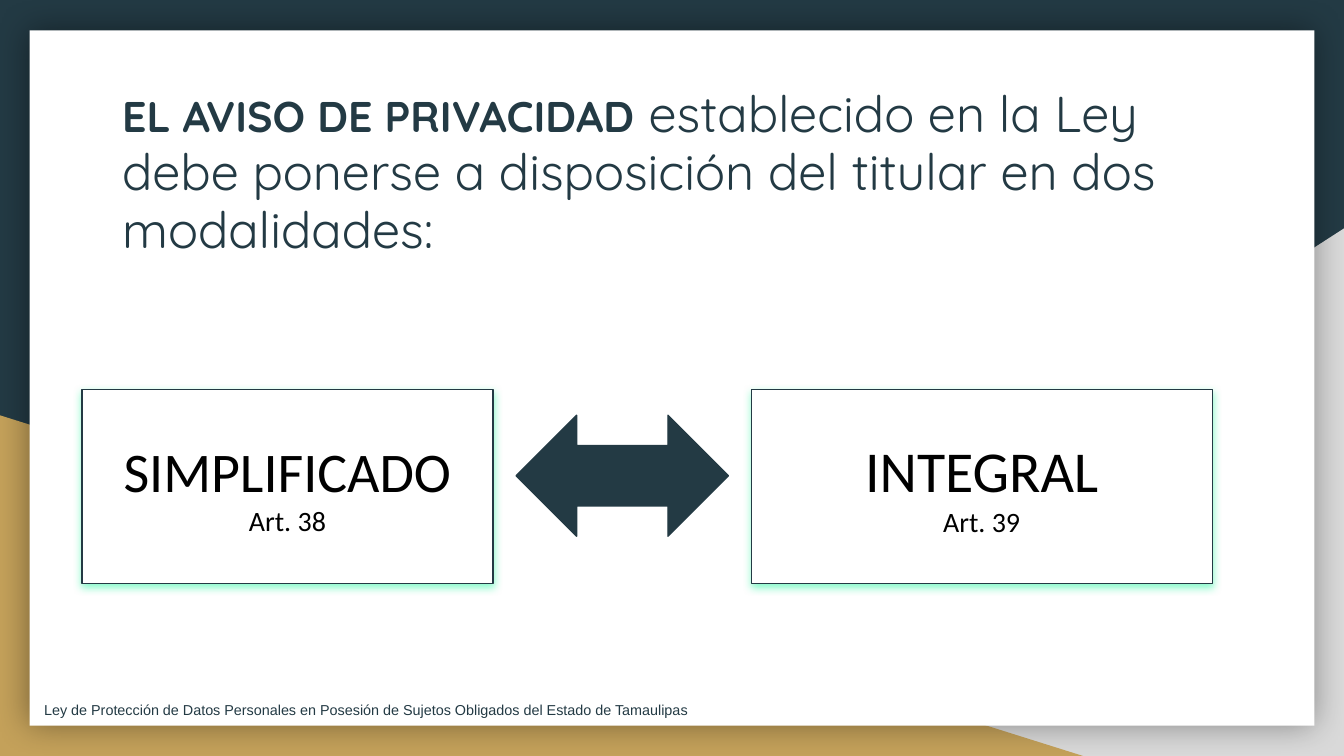
from lxml import etree
from pptx import Presentation
from pptx import util as u
from pptx.dml.color import RGBColor
from pptx.enum import shapes, text
from pptx.oxml.ns import qn

NAVY = RGBColor(0x23, 0x3A, 0x44)
GOLD = RGBColor(0xC4, 0xA1, 0x5A)
GREY = RGBColor(0xD9, 0xD9, 0xD9)
MINT = RGBColor(0x14, 0xF5, 0x97)
WHITE = RGBColor(0xFF, 0xFF, 0xFF)
BLACK = RGBColor(0, 0, 0)
CELL = u.Inches(0.1)
COLS, ROWS = 100, 56.25
KIND = shapes.MSO_SHAPE


class Deck:
    heading, label, small = "Quicksand", "Calibri", "Arial"

    def __init__(self):
        self.prs = Presentation()
        self.prs.slide_width = int(COLS * CELL)
        self.prs.slide_height = int(ROWS * CELL)
        self.s = self.prs.slides.add_slide(self.prs.slide_layouts[6])
        fill = self.s.background.fill
        fill.solid()
        fill.fore_color.rgb = NAVY

    def grid(self, box):
        return [int(n * CELL) for n in box]

    def shape(self, kind, box, color, line=None, flip=False):
        sp = self.s.shapes.add_shape(kind, *self.grid(box))
        sp.shadow.inherit = False
        sp.fill.solid()
        sp.fill.fore_color.rgb = color
        if line is None:
            sp.line.fill.background()
        else:
            sp.line.color.rgb = line
            sp.line.width = u.Pt(0.75)
        if flip:
            sp._element.spPr.find(qn("a:xfrm")).set("flipH", "1")
        return sp

    def shadow(self, sp, color, alpha, blur, dist=0, angle=0):
        effects = sp._element.spPr.find(qn("a:effectLst"))
        outer = etree.SubElement(
            effects, qn("a:outerShdw"), blurRad=str(u.Pt(blur)), dist=str(u.Pt(dist)),
            dir=str(angle * 60000), algn="bl", rotWithShape="0")
        clr = etree.SubElement(outer, qn("a:srgbClr"), val=str(color))
        etree.SubElement(clr, qn("a:alpha"), val=str(alpha * 1000))

    def frame(self, sp, anchor):
        tf = sp.text_frame
        tf.word_wrap = True
        tf.vertical_anchor = anchor
        tf.margin_left = tf.margin_right = tf.margin_top = tf.margin_bottom = CELL
        return tf

    def style(self, font, name, size, color):
        font.name, font.size, font.color.rgb = name, u.Pt(size), color

    def textbox(self, box, runs, name, anchor=text.MSO_ANCHOR.TOP, spacing=0.96):
        tf = self.frame(self.s.shapes.add_textbox(*self.grid(box)), anchor)
        p = tf.paragraphs[0]
        p.line_spacing = spacing
        for words, size, bold in runs:
            r = p.add_run()
            r.text = words
            self.style(r.font, name, size, NAVY)
            r.font.bold = bold

    def card(self, box, lines):
        sp = self.shape(KIND.RECTANGLE, box, WHITE, NAVY)
        self.shadow(sp, MINT, 50, 4.5, 1.5, 90)
        tf = self.frame(sp, text.MSO_ANCHOR.MIDDLE)
        for i, (words, size) in enumerate(lines):
            p = tf.add_paragraph() if i else tf.paragraphs[0]
            p.text = words
            p.alignment = text.PP_ALIGN.CENTER
            self.style(p.font, self.label, size, BLACK)


def main():
    d = Deck()
    d.shape(KIND.RIGHT_TRIANGLE, (39.2, 17, 60.8, 39.25), GREY, flip=True)
    d.shape(KIND.RIGHT_TRIANGLE, (0, 30.9, 80.6, 25.35), GOLD)
    panel = d.shape(KIND.RECTANGLE, (2.2, 2.25, 95.6, 51.75), WHITE)
    d.shadow(panel, BLACK, 40, 18)

    d.textbox((8.1, 5.4, 82.1, 15), [
        ("EL AVISO DE PRIVACIDAD", 23, True),
        (" establecido en la Ley debe ponerse a disposición del titular en dos modalidades:",
         27, False),
    ], d.heading)

    d.shape(KIND.LEFT_RIGHT_ARROW, (38.4, 30.9, 15.8, 9), NAVY, NAVY)
    for left, width, name, size, article in (
            (6.1, 30.6, "SIMPLIFICADO", 30, "Art. 38"),
            (55.9, 34.3, "INTEGRAL", 31, "Art. 39")):
        d.card((left, 29, width, 14.4), [(name, size), (article, 15)])

    d.textbox((2.3, 51.4, 86.1, 3), [
        ("Ley de Protección de Datos Personales en Posesión de Sujetos Obligados "
         "del Estado de Tamaulipas", 7.7, False),
    ], d.small, text.MSO_ANCHOR.MIDDLE, 0.95)
    d.prs.save("out.pptx")


if __name__ == "__main__":
    main()
